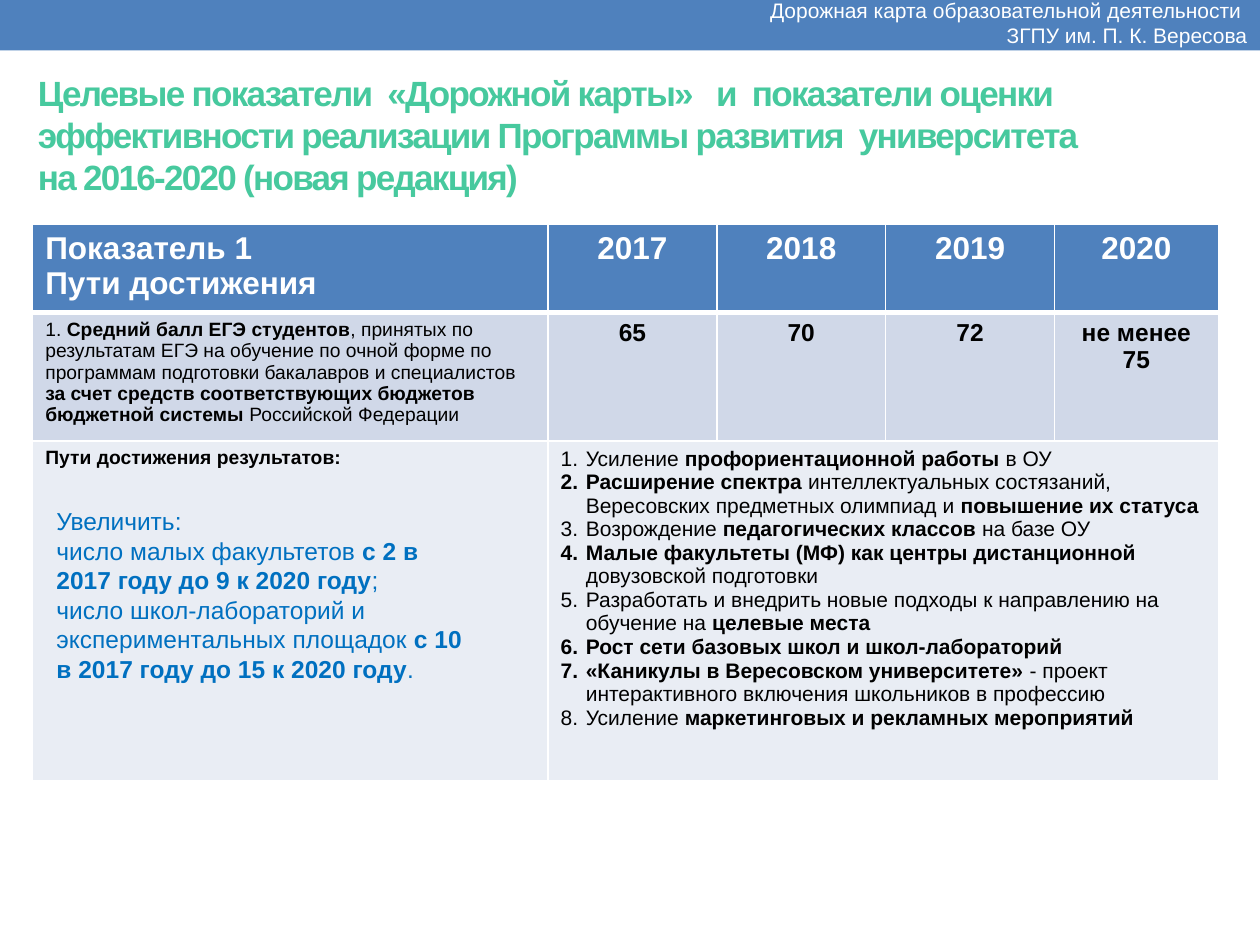
import pptx
import pptx.util
import pptx.dml.color
import pptx.enum.shapes
import pptx.enum.text
import pptx.oxml.ns
import lxml.etree

Inches, Pt = pptx.util.Inches, pptx.util.Pt
RGBColor = pptx.dml.color.RGBColor
ALIGN, ANCHOR = pptx.enum.text.PP_ALIGN, pptx.enum.text.MSO_ANCHOR
qn = pptx.oxml.ns.qn

BLUE = RGBColor(0x4F, 0x81, 0xBD)
GREEN = RGBColor(0x47, 0xC9, 0x9E)
NOTE_BLUE = RGBColor(0x00, 0x70, 0xC0)
WHITE = RGBColor(0xFF, 0xFF, 0xFF)
BLACK = RGBColor(0, 0, 0)
ROW_DARK = RGBColor(0xD0, 0xD8, 0xE8)
ROW_LIGHT = RGBColor(0xE9, 0xED, 0xF4)

# In all texts ** switches bold on and off.
BANNER = ["Дорожная карта образовательной деятельности ", "ЗГПУ им. П. К. Вересова"]
TITLE = [
    "**Целевые показатели  «Дорожной карты»   и  показатели оценки "
    "эффективности реализации Программы развития  университета",
    "**на 2016-2020 (новая редакция)",
]
HEADER = [["**Показатель 1", "**Пути достижения"],
          ["**2017"], ["**2018"], ["**2019"], ["**2020"]]
INDICATOR = [
    ["1. **Средний балл ЕГЭ студентов**, принятых по результатам ЕГЭ на обучение "
     "по очной форме по программам подготовки бакалавров и специалистов **за счет "
     "средств соответствующих бюджетов бюджетной системы **Российской Федерации"],
    ["**65"], ["**70"], ["**72"], ["**не менее 75"],
]
WAYS_LABEL = ["**Пути достижения результатов:"]
WAYS = [
    "Усиление **профориентационной работы **в ОУ",
    "**Расширение спектра** интеллектуальных состязаний, Вересовских предметных "
    "олимпиад и **повышение их статуса",
    "Возрождение **педагогических классов **на базе ОУ",
    "**Малые факультеты (МФ) как центры дистанционной **довузовской подготовки",
    "Разработать и внедрить новые подходы к направлению на обучение на **целевые места",
    "**Рост сети базовых школ и школ-лабораторий",
    "**«Каникулы в Вересовском университете» **- проект интерактивного включения "
    "школьников в профессию",
    "Усиление** маркетинговых и рекламных мероприятий",
]
GOALS = [
    "Увеличить:",
    "число малых факультетов **с 2 в 2017 году до 9 к 2020 году**;",
    "число школ-лабораторий и экспериментальных площадок "
    "**с 10 в 2017 году до 15 к 2020 году**.",
]
COLUMN_WIDTHS = [4.09, 1.34, 1.34, 1.34, 1.3]
ROW_HEIGHTS = [0.7, 1.02, 2.7]


def write(frame, paragraphs, size, color, align=ALIGN.LEFT, tracking=None,
          numbered=False):
    """Fill a text frame, one paragraph per string, with ** toggling bold."""
    frame.word_wrap = True
    for i, text in enumerate(paragraphs):
        paragraph = frame.paragraphs[0] if i == 0 else frame.add_paragraph()
        layout = {"alignment": align, "line_spacing": 1.0,
                  "space_before": Pt(0), "space_after": Pt(0)}
        for key, value in layout.items():
            setattr(paragraph, key, value)
        if numbered:
            number_paragraph(paragraph)
        for j, part in enumerate(text.split("**")):
            if not part:
                continue
            run = paragraph.add_run()
            run.text = part
            style = {"name": "Arial", "size": Pt(size), "bold": j % 2 == 1}
            for key, value in style.items():
                setattr(run.font, key, value)
            run.font.color.rgb = color
            if tracking is not None:
                run.font._element.set("spc", str(tracking * 100))


def number_paragraph(paragraph):
    properties = paragraph._p.get_or_add_pPr()
    properties.set("marL", str(Inches(0.2)))
    properties.set("indent", str(-Inches(0.2)))
    font = lxml.etree.SubElement(properties, qn("a:buFont"))
    font.set("typeface", "Arial")
    lxml.etree.SubElement(properties, qn("a:buAutoNum")).set("type", "arabicPeriod")


def set_borders(cell, widths):
    properties = cell._tc.get_or_add_tcPr()
    for i, (side, width) in enumerate(widths.items()):
        line = lxml.etree.Element(qn("a:ln" + side), w=str(Pt(width)))
        fill = lxml.etree.SubElement(line, qn("a:solidFill"))
        lxml.etree.SubElement(fill, qn("a:srgbClr")).set("val", str(WHITE))
        properties.insert(i, line)


def add_text(slide, box, paragraphs, size, color, **options):
    frame = slide.shapes.add_textbox(*map(Inches, box)).text_frame
    write(frame, paragraphs, size, color, **options)
    return frame


def add_indicator_table(slide):
    table = slide.shapes.add_table(
        len(ROW_HEIGHTS), len(COLUMN_WIDTHS), Inches(0.26), Inches(1.78),
        Inches(sum(COLUMN_WIDTHS)), Inches(sum(ROW_HEIGHTS))).table
    for column, width in zip(table.columns, COLUMN_WIDTHS):
        column.width = Inches(width)
    for row, height in zip(table.rows, ROW_HEIGHTS):
        row.height = Inches(height)
    table.cell(2, 1).merge(table.cell(2, 4))

    for r, fill in enumerate([BLUE, ROW_DARK, ROW_LIGHT]):
        for cell in table.rows[r].cells:
            cell.fill.solid()
            cell.fill.fore_color.rgb = fill
            set_borders(cell, {"L": 1, "R": 1, "T": 3 if r == 1 else 1,
                               "B": 3 if r == 0 else 1})

    for c, (heading, value) in enumerate(zip(HEADER, INDICATOR)):
        align = ALIGN.CENTER if c else ALIGN.LEFT
        write(table.cell(0, c).text_frame, heading, 18, WHITE, align)
        write(table.cell(1, c).text_frame, value, 14 if c else 11, BLACK, align)
    write(table.cell(2, 0).text_frame, WAYS_LABEL, 11, BLACK)
    write(table.cell(2, 1).text_frame, WAYS, 12, BLACK, numbered=True)


def main():
    deck = pptx.Presentation()
    deck.slide_width, deck.slide_height = Inches(10), Inches(7.5)
    slide = deck.slides.add_slide(deck.slide_layouts[5])

    banner = slide.shapes.add_shape(pptx.enum.shapes.MSO_SHAPE.RECTANGLE,
                                    0, 0, Inches(10), Inches(0.4))
    banner.shadow.inherit = False
    banner.fill.solid()
    banner.fill.fore_color.rgb = BLUE
    banner.line.fill.background()
    banner_text = add_text(slide, (5.5, 0, 4.5, 0.36), BANNER, 12, WHITE,
                           align=ALIGN.RIGHT)
    banner_text.vertical_anchor = ANCHOR.MIDDLE

    title = slide.shapes.title
    for key, value in zip(("left", "top", "width", "height"), (0.2, 0.52, 9.53, 1.11)):
        setattr(title, key, Inches(value))
    title.text_frame.auto_size = pptx.enum.text.MSO_AUTO_SIZE.NONE
    title.text_frame.vertical_anchor = ANCHOR.TOP
    write(title.text_frame, TITLE, 20, GREEN, tracking=-1)

    add_indicator_table(slide)
    add_text(slide, (0.35, 3.97, 3.46, 1.82), GOALS, 14, NOTE_BLUE)
    deck.save("out.pptx")


if __name__ == "__main__":
    main()
